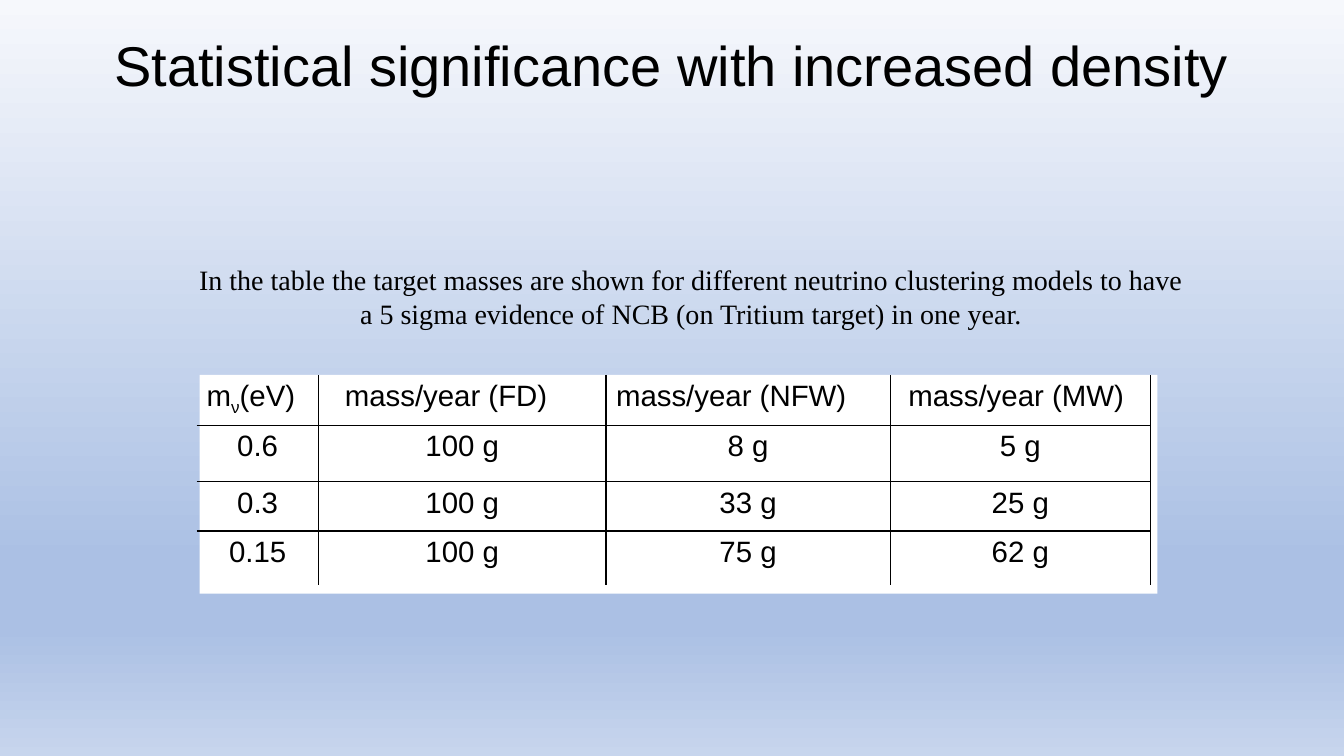
from lxml import etree
from pptx import Presentation
from pptx.dml.color import RGBColor
from pptx.enum.shapes import MSO_SHAPE
from pptx.enum.text import MSO_ANCHOR, PP_ALIGN
from pptx.oxml.ns import qn
from pptx.util import Inches, Pt

RECTANGLE = MSO_SHAPE.RECTANGLE
TOP = MSO_ANCHOR.TOP
LEFT, CENTER = PP_ALIGN.LEFT, PP_ALIGN.CENTER

BLACK, WHITE = "000000", "FFFFFF"
BACKDROP = [(0, "F6F8FC"), (74, "ABC0E4"), (83, "ABC0E4"), (100, "C7D5ED")]

# Each text is a list of (characters, baseline shift in percent)
HEADINGS = [
    [("m", 0), ("ν", -25), ("(eV)", 0)],
    [("mass/year (FD)", 0)],
    [("mass/year (NFW)", 0)],
    [("mass/year (MW)", 0)],
]
HEADING_MARGINS = [0.1, 0.26, 0.1, 0.18]
TARGET_MASSES = [
    ("0.6", "100 g", "8 g", "5 g"),
    ("0.3", "100 g", "33 g", "25 g"),
    ("0.15", "100 g", "75 g", "62 g"),
]
COLUMN_WIDTHS = [1.21, 2.85, 2.82, 2.58]
ROW_HEIGHTS = [0.49, 0.56, 0.49, 0.54]


def color(hex_string):
    return RGBColor.from_string(hex_string)


def apply(target, values):
    for name, value in values.items():
        setattr(target, name, value)


class SlideBuilder:
    title_font = {"name": "Arial", "size": Pt(40)}
    caption_font = {"name": "Times New Roman", "size": Pt(20)}
    table_font = {"name": "Arial", "size": Pt(21)}
    border_width = Pt(1)

    def __init__(self, slide):
        self.slide = slide

    def background(self, stops):
        fill = self.slide.background.fill
        fill.gradient()
        fill.gradient_angle = 270
        stop_list = self.slide.element.xpath(".//p:bg//a:gsLst")[0]
        for stop in list(stop_list):
            stop_list.remove(stop)
        for percent, shade in stops:
            stop = etree.SubElement(stop_list, qn("a:gs"), pos=str(percent * 1000))
            etree.SubElement(stop, qn("a:srgbClr"), val=shade)

    def panel(self, box, shade):
        panel = self.slide.shapes.add_shape(RECTANGLE, *map(Inches, box))
        panel.shadow.inherit = False
        panel.fill.solid()
        panel.fill.fore_color.rgb = color(shade)
        panel.line.fill.background()

    def fill_paragraph(self, paragraph, pieces, font, alignment):
        paragraph.alignment = alignment
        for characters, shift in pieces:
            run = paragraph.add_run()
            run.text = characters
            apply(run.font, font)
            run.font.color.rgb = color(BLACK)
            if shift:
                run.font._element.set("baseline", str(shift * 1000))

    def text(self, box, lines, font, frame_format):
        frame = self.slide.shapes.add_textbox(*map(Inches, box)).text_frame
        apply(frame, {"word_wrap": True, "vertical_anchor": TOP, **frame_format})
        for index, line in enumerate(lines):
            paragraph = frame.add_paragraph() if index else frame.paragraphs[0]
            self.fill_paragraph(paragraph, [(line, 0)], font, CENTER)

    def borders(self, cell, drawn):
        properties = cell._tc.get_or_add_tcPr()
        for side, visible in drawn.items():
            line = etree.SubElement(
                properties, qn(f"a:ln{side}"), w=str(self.border_width))
            if visible:
                fill = etree.SubElement(line, qn("a:solidFill"))
                etree.SubElement(fill, qn("a:srgbClr"), val=BLACK)
            else:
                etree.SubElement(line, qn("a:noFill"))

    def table(self, box, rows, widths, heights, heading_margins):
        table = self.slide.shapes.add_table(
            len(rows), len(widths), *map(Inches, box)).table
        apply(table, {"first_row": False, "horz_banding": False})
        for column, width in zip(table.columns, widths):
            column.width = Inches(width)
        for row, height in zip(table.rows, heights):
            row.height = Inches(height)
        for r, row in enumerate(rows):
            for c, pieces in enumerate(row):
                cell = table.cell(r, c)
                # Inner rules plus the right edge; other outer edges stay open
                self.borders(cell, {"L": c > 0, "R": True,
                                    "T": r > 0, "B": r < len(rows) - 1})
                cell.fill.background()
                if r == 0:
                    cell.margin_left = Inches(heading_margins[c])
                self.fill_paragraph(cell.text_frame.paragraphs[0], pieces,
                                    self.table_font, CENTER if r else LEFT)


def main():
    presentation = Presentation()
    apply(presentation, {"slide_width": Inches(13.33), "slide_height": Inches(7.5)})
    builder = SlideBuilder(
        presentation.slides.add_slide(presentation.slide_layouts[6]))

    # Backdrop and white panel behind the table
    builder.background(BACKDROP)
    builder.panel((1.98, 3.72, 9.5, 2.17), WHITE)

    # Title
    builder.text((0.61, 0.25, 12.09, 1.4),
                 ["Statistical significance with increased density"],
                 builder.title_font, {})

    # Target masses per clustering model
    mass_rows = [[[(value, 0)] for value in row] for row in TARGET_MASSES]
    builder.table((1.95, 3.72, sum(COLUMN_WIDTHS), sum(ROW_HEIGHTS)),
                  [HEADINGS] + mass_rows, COLUMN_WIDTHS, ROW_HEIGHTS,
                  HEADING_MARGINS)

    # Caption above the table
    builder.text(
        (1.58, 2.56, 10.65, 0.77),
        ["In the table the target masses are shown for different neutrino "
         "clustering models to have",
         "a 5 sigma evidence of NCB (on Tritium target) in one year."],
        builder.caption_font, {"margin_right": Inches(0.2)})

    presentation.save("out.pptx")


if __name__ == "__main__":
    main()
